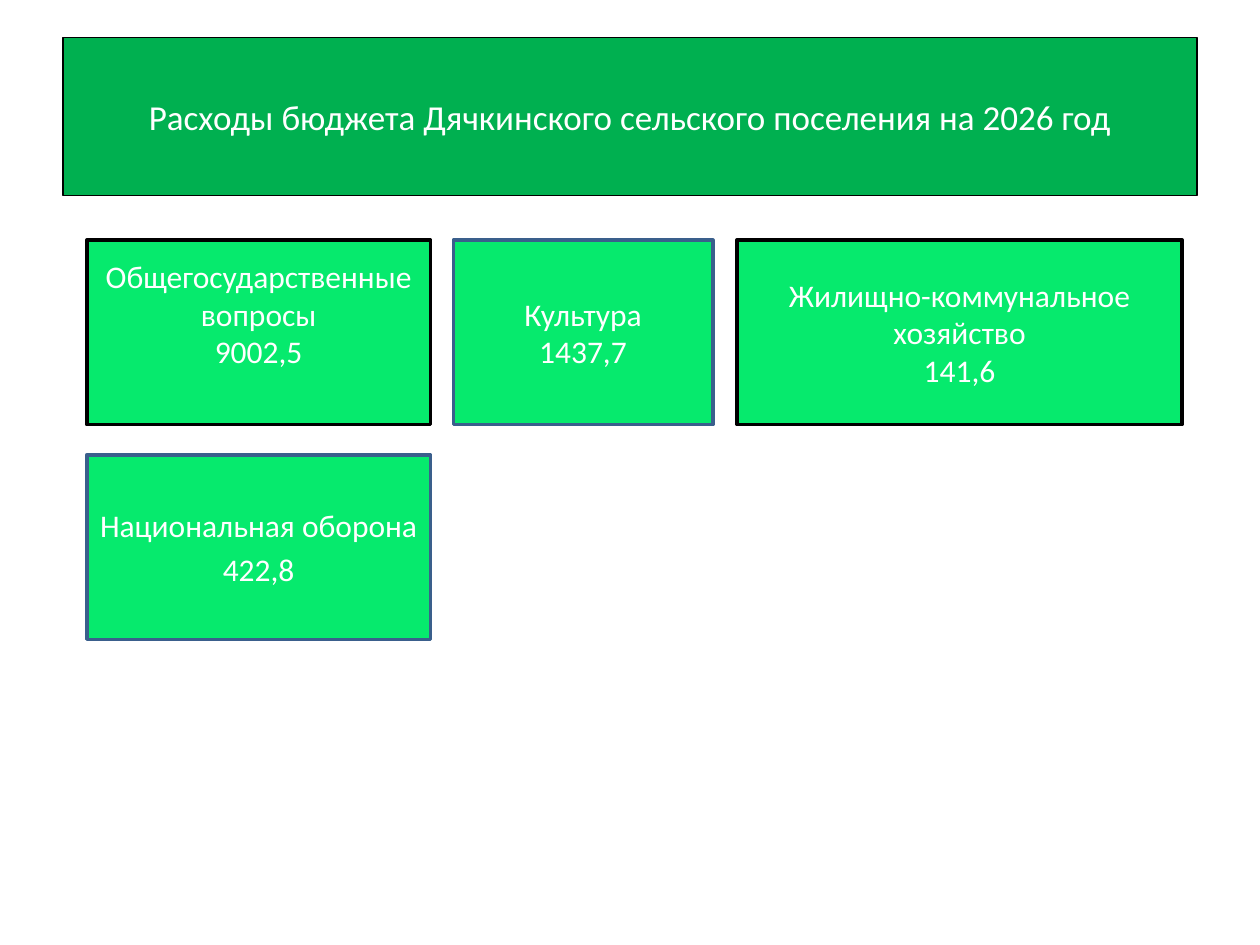
from dataclasses import dataclass

from pptx import Presentation
from pptx.dml.color import RGBColor
from pptx.enum.shapes import MSO_SHAPE
from pptx.enum.text import MSO_ANCHOR, PP_ALIGN
from pptx.shapes.autoshape import Shape
from pptx.slide import Slide
from pptx.util import Cm, Pt


@dataclass(frozen=True)
class Theme:
    font: str = "Calibri"
    white: str = "FFFFFF"
    black: str = "000000"
    blue: str = "3A5F8C"
    green: str = "00B050"
    lime: str = "06EA6D"
    title: int = 20
    body: int = 18
    thin: float = 0.75
    thick: float = 2


@dataclass(frozen=True)
class Box:
    left: float
    top: float
    width: float
    height: float
    lines: tuple[str, ...]
    edge: str
    gap: float = 0
    lift: float = 0


THEME = Theme()
LEFT, WIDE, HIGH = 1.75, 6.93, 3.72
ROW_ONE, ROW_TWO = 4.84, 9.17

TITLE = Box(1.27, 0.76, 22.86, 3.18,
            ("Расходы бюджета Дячкинского сельского поселения на 2026 год",), THEME.black)
ITEMS = (
    Box(LEFT, ROW_ONE, WIDE, HIGH, ("Общегосударственные вопросы", "9002,5"),
        THEME.black, lift=0.76),
    Box(9.14, ROW_ONE, 5.23, HIGH, ("Культура", "1437,7"), THEME.blue),
    Box(LEFT, ROW_TWO, WIDE, HIGH, ("Национальная оборона", "422,8"),
        THEME.blue, gap=3.6),
    Box(14.86, ROW_ONE, 8.97, HIGH, ("Жилищно-коммунальное хозяйство", "141,6"),
        THEME.black),
)


def write(shape: Shape, lines: tuple[str, ...], *, size: float, color: str,
          gap: float = 0, lift: float = 0) -> None:
    frame = shape.text_frame
    frame.word_wrap = True
    frame.vertical_anchor = MSO_ANCHOR.MIDDLE
    frame.margin_left = frame.margin_right = Cm(0.2)
    frame.margin_top = Cm(0.13)
    frame.margin_bottom = Cm(0.13 + lift)
    for index, line in enumerate(lines):
        para = frame.add_paragraph() if index else frame.paragraphs[0]
        para.alignment = PP_ALIGN.CENTER
        para.space_before = Pt(gap if index else 0)
        run = para.add_run()
        run.text = line
        run.font.name = THEME.font
        run.font.size = Pt(size)
        run.font.color.rgb = RGBColor.from_string(color)


def draw(slide: Slide, box: Box, *, fill: str, weight: float, size: float) -> None:
    shape = slide.shapes.add_shape(MSO_SHAPE.RECTANGLE, Cm(box.left), Cm(box.top),
                                   Cm(box.width), Cm(box.height))
    shape.shadow.inherit = False
    shape.fill.solid()
    shape.fill.fore_color.rgb = RGBColor.from_string(fill)
    shape.line.color.rgb = RGBColor.from_string(box.edge)
    shape.line.width = Pt(weight)
    write(shape, box.lines, size=size, color=THEME.white, gap=box.gap, lift=box.lift)


def main() -> None:
    deck = Presentation()
    deck.slide_width, deck.slide_height = Cm(25.4), Cm(19.05)
    slide = deck.slides.add_slide(deck.slide_layouts[6])
    draw(slide, TITLE, fill=THEME.green, weight=THEME.thin, size=THEME.title)
    for item in ITEMS:
        draw(slide, item, fill=THEME.lime, weight=THEME.thick, size=THEME.body)
    deck.save("out.pptx")


if __name__ == "__main__":
    main()
